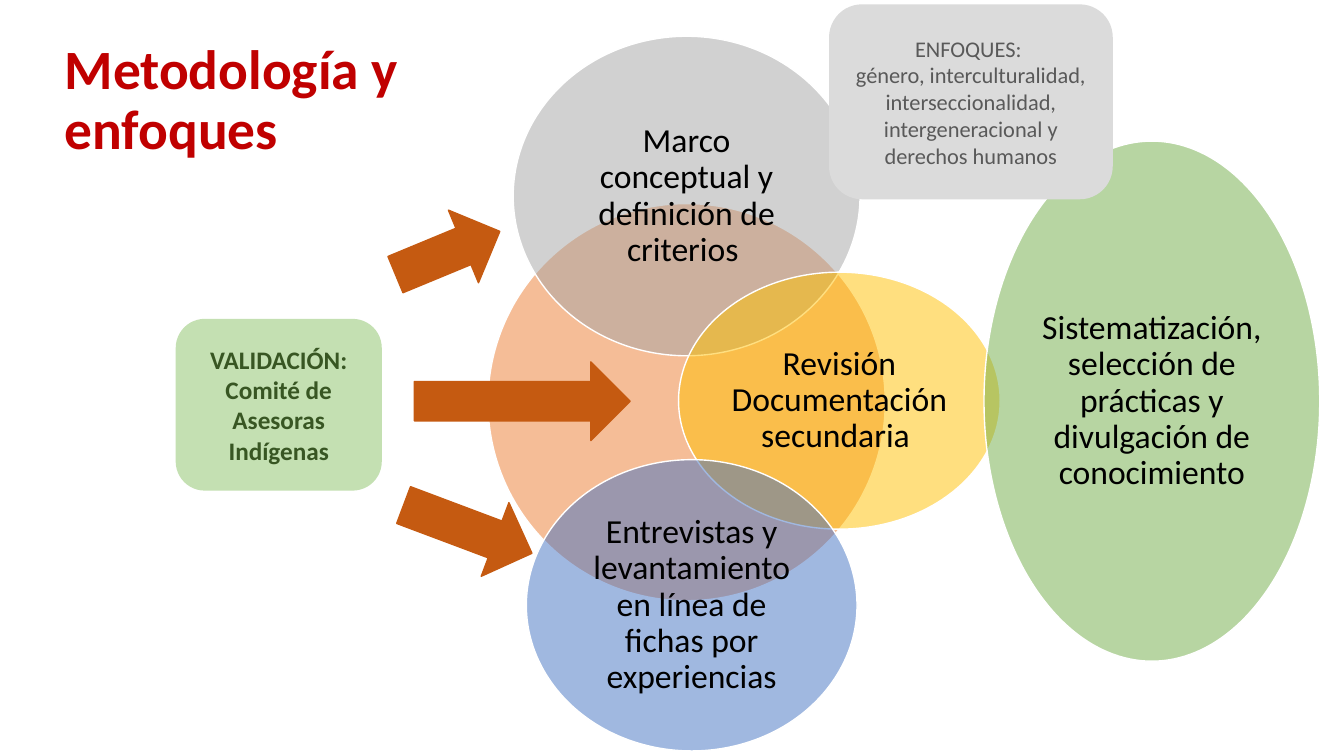
"""Build the methodology and approaches slide."""
from lxml.etree import SubElement
from pptx import Presentation
from pptx.dml.color import RGBColor
from pptx.enum.shapes import MSO_SHAPE as Shape
from pptx.enum.text import MSO_ANCHOR as Anchor, PP_ALIGN as Align
from pptx.oxml.ns import qn
from pptx.util import Pt

PX = 9144
SLIDE_SIZE = (1333, 750)
TITLE = "Metodología y enfoques"
TITLE_BOX = (54, 56, 410, 89)
ARROW_COLOUR = "C55A11"

STAGES = [
    ((484, 202, 394, 394), "ED7D31", ""),
    ((509, 36, 344, 317), "A5A5A5", "Marco conceptual y definición de criterios "),
    ((673, 270, 319, 255), "FFC000", "Revisión Documentación secundaria "),
    ((522, 456, 328, 289), "4372C3",
     "Entrevistas y levantamiento en línea de fichas por experiencias"),
    ((976, 140, 333, 516), "70AD47",
     "Sistematización, selección de prácticas y divulgación de conocimiento"),
]
NOTES = [
    ((175, 317, 203, 169), "C4E0B2", ["VALIDACIÓN: Comité de Asesoras Indígenas"],
     {"size": 18, "colour": "385623", "bold": True}),
    ((823, 5, 280, 192), "DBDBDB",
     ["ENFOQUES: ",
      "género, interculturalidad, interseccionalidad, intergeneracional y derechos humanos"],
     {"size": 16, "colour": "595959"}),
]
ARROWS = [
    ((411, 359, 214, 78), 0),
    ((388, 212, 112, 78), 337.5),
    ((396, 486, 136, 78), 20.6),
]


def rgb(colour):
    """Turn a hex string into a colour."""
    return RGBColor.from_string(colour)


def emu(box):
    """Turn px lengths into EMU."""
    return [length * PX for length in box]


def write(holder, paragraphs, size, colour, bold=False, align=Align.CENTER,
          spacing=1.0, insets=(10, 5)):
    """Fill a shape with formatted paragraphs."""
    frame = holder.text_frame
    across, down = emu(insets)
    frame_format = {"word_wrap": True, "vertical_anchor": Anchor.MIDDLE,
                    "margin_left": across, "margin_right": across,
                    "margin_top": down, "margin_bottom": down}
    for key, value in frame_format.items():
        setattr(frame, key, value)
    frame.text = "\n".join(paragraphs)
    for paragraph in frame.paragraphs:
        paragraph.alignment = align
        paragraph.line_spacing = spacing
        for run in paragraph.runs:
            run.font.color.rgb = rgb(colour)
            for key, value in {"name": "Calibri", "size": Pt(size), "bold": bold}.items():
                setattr(run.font, key, value)


def draw(slide, kind, box, fill, line, opacity=100):
    """Add a filled and outlined preset shape."""
    shape = slide.shapes.add_shape(kind, *emu(box))
    shape.shadow.inherit = False
    shape.fill.solid()
    shape.fill.fore_color.rgb = rgb(fill)
    shape.line.color.rgb = rgb(line)
    shape.line.width = Pt(1)
    if opacity < 100:
        tint = shape.fill._xPr.find(qn("a:solidFill"))[0]
        SubElement(tint, qn("a:alpha")).set("val", str(opacity * 1000))
    return shape


def main():
    """Compose and save the slide."""
    deck = Presentation()
    deck.slide_width, deck.slide_height = emu(SLIDE_SIZE)
    slide = deck.slides.add_slide(deck.slide_layouts[5])

    title = slide.shapes.title
    title.left, title.top, title.width, title.height = emu(TITLE_BOX)
    write(title, [TITLE], 39.6, "C00000", bold=True, align=Align.LEFT, spacing=0.9)

    for box, fill, label in STAGES:
        stage = draw(slide, Shape.OVAL, box, fill, "FFFFFF", opacity=50)
        if label:
            write(stage, [label], 24, "000000", spacing=0.9, insets=(3, 3))
    for box, fill, paragraphs, style in NOTES:
        note = draw(slide, Shape.ROUNDED_RECTANGLE, box, fill, fill)
        write(note, paragraphs, **style)
    for box, angle in ARROWS:
        draw(slide, Shape.RIGHT_ARROW, box, ARROW_COLOUR, ARROW_COLOUR).rotation = angle

    deck.save("out.pptx")


if __name__ == "__main__":
    main()
